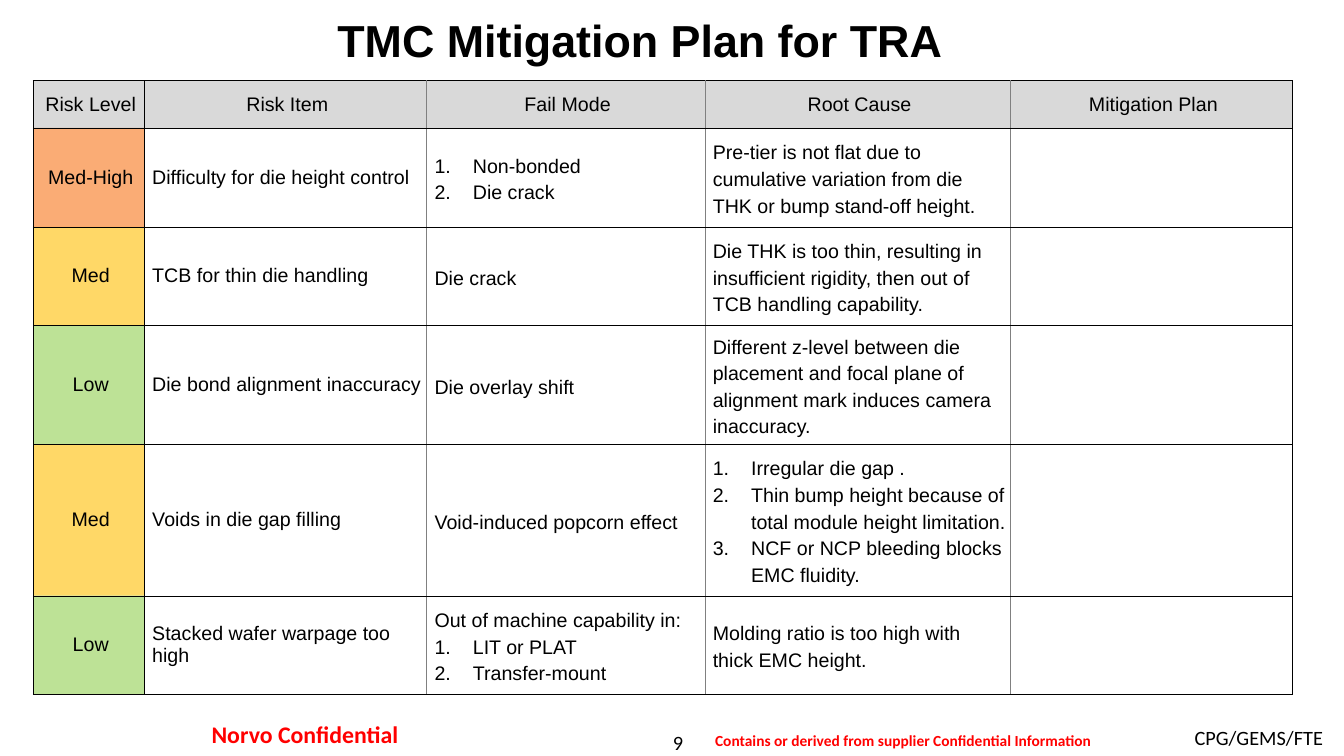
from lxml import etree
from pptx import Presentation
from pptx.dml.color import RGBColor
from pptx.enum.text import MSO_ANCHOR as Anchor, PP_ALIGN as Align
from pptx.oxml.ns import qn
from pptx.util import Inches, Pt

COLORS = {
    "text": "000000", "notice": "FF0000", "header": "D9D9D9", "body": "FFFFFF",
    "frame": "000000", "divider": "808080",
    "Med-High": "F77619", "Med": "FFBF03", "Low": "92D050",
}
HEADINGS = ["Risk Level", "Risk Item", "Fail Mode", "Root Cause", "Mitigation Plan"]
COLUMN_WIDTHS = [1.1, 2.8, 2.76, 3.03, 2.8]
ROW_HEIGHTS = [0.47, 0.98, 0.98, 1.18, 1.5, 0.98]
NUMBERED = "# "  # marks an automatically numbered line
RISKS = [
    ["Med-High", "Difficulty for die height control", "# Non-bonded\n# Die crack",
     "Pre-tier is not flat due to cumulative variation from die THK or bump stand-off height.", ""],
    ["Med", "TCB for thin die handling", "Die crack",
     "Die THK is too thin, resulting in insufficient rigidity, "
     "then out of TCB handling capability.", ""],
    ["Low", "Die bond alignment inaccuracy", "Die overlay shift",
     "Different z-level between die placement and focal plane of alignment mark "
     "induces camera inaccuracy.", ""],
    ["Med", "Voids in die gap filling", "Void-induced popcorn effect",
     "# Irregular die gap .\n# Thin bump height because of total module height limitation.\n"
     "# NCF or NCP bleeding blocks EMC fluidity.", ""],
    ["Low", "Stacked wafer warpage too high",
     "Out of machine capability in:\n# LIT or PLAT\n# Transfer-mount",
     "Molding ratio is too high with thick EMC height.", ""],
]


class SlideBuilder:
    def __init__(self, slide, font="Arial", size=14):
        self.slide, self.font, self.size = slide, font, size

    def style(self, font, name, size, color="text", bold=False):
        font.name, font.size, font.bold = name, Pt(size), bold
        font.color.rgb = RGBColor.from_string(COLORS[color])

    def text(self, box, content, size, name="Calibri", color="text", bold=False,
             align=Align.CENTER, anchor=Anchor.TOP, inset=(0, 0)):
        frame = self.slide.shapes.add_textbox(*map(Inches, box)).text_frame
        frame.word_wrap, frame.vertical_anchor = True, anchor
        frame.margin_left = frame.margin_right = Inches(inset[0])
        frame.margin_top = frame.margin_bottom = Inches(inset[1])
        frame.text = content
        paragraph = frame.paragraphs[0]
        paragraph.alignment = align
        self.style(paragraph.runs[0].font, name, size, color, bold)

    def number(self, paragraph):
        properties = paragraph._p.get_or_add_pPr()
        properties.set("marL", str(Inches(0.38)))
        properties.set("indent", str(-Inches(0.38)))
        etree.SubElement(properties, qn("a:buAutoNum"), type="arabicPeriod")

    def borders(self, cell, sides):
        properties = cell._tc.get_or_add_tcPr()
        for position, (side, color, width) in enumerate(sides):
            line = etree.Element(qn(f"a:ln{side}"), w=str(Pt(width)))
            fill = etree.SubElement(line, qn("a:solidFill"))
            etree.SubElement(fill, qn("a:srgbClr"), val=COLORS[color])
            properties.insert(position, line)

    def fill(self, cell, color, opacity=100):
        cell.fill.solid()
        cell.fill.fore_color.rgb = RGBColor.from_string(COLORS[color])
        if opacity < 100:
            shade = cell._tc.tcPr.find(".//" + qn("a:srgbClr"))
            etree.SubElement(shade, qn("a:alpha"), val=str(opacity * 1000))

    def cell(self, cell, content, align, leading=None):
        cell.vertical_anchor = Anchor.MIDDLE
        cell.margin_left = Inches(0.08)
        cell.margin_right = cell.margin_top = cell.margin_bottom = Inches(0.04)
        lines = content.split("\n")
        cell.text_frame.text = "\n".join(line.removeprefix(NUMBERED) for line in lines)
        for line, paragraph in zip(lines, cell.text_frame.paragraphs):
            paragraph.alignment = align
            if leading:
                paragraph.line_spacing = Pt(leading)
            if line.startswith(NUMBERED):
                self.number(paragraph)
            self.style(paragraph.font, self.font, self.size)
            for run in paragraph.runs:
                self.style(run.font, self.font, self.size)

    def table(self, left, top, widths, heights, rows):
        last_row, last_column = len(rows) - 1, len(widths) - 1
        table = self.slide.shapes.add_table(
            len(rows), len(widths), Inches(left), Inches(top),
            Inches(sum(widths)), Inches(sum(heights))).table
        table.first_row = table.horz_banding = False
        for column, width in zip(table.columns, widths):
            column.width = Inches(width)
        for row, height in zip(table.rows, heights):
            row.height = Inches(height)
        outer, inner, divider = ("frame", 0.75), ("frame", 0.25), ("divider", 0.25)
        for r, row in enumerate(rows):
            for c, content in enumerate(row):
                cell = table.cell(r, c)
                centred = r == 0 or c == 0
                self.cell(cell, content, Align.CENTER if centred else Align.LEFT,
                          19 if r and c in (2, 3) else None)
                if r and c == 0:
                    self.fill(cell, content, opacity=60)
                else:
                    self.fill(cell, "body" if r else "header")
                self.borders(cell, [
                    ("L", *(outer if c <= 1 else divider)),
                    ("R", *(outer if c in (0, last_column) else divider)),
                    ("T", *(outer if r <= 1 else inner)),
                    ("B", *(outer if r in (0, last_row) else inner)),
                ])


def main():
    deck = Presentation()
    deck.slide_width, deck.slide_height = Inches(13.33), Inches(7.5)
    builder = SlideBuilder(deck.slides.add_slide(deck.slide_layouts[6]))

    # Footer
    builder.text((5.56, 7.24, 2.33, 0.24), "9", 14.5)
    builder.text((8.83, 7.15, 4.39, 0.35), "CPG/GEMS/FTE", 14.5,
                 align=Align.RIGHT, inset=(0.1, 0.05))
    notice = {"color": "notice", "bold": True, "inset": (0.12, 0.06)}
    builder.text((1.55, 7.08, 2.95, 0.41), "Norvo Confidential", 17, **notice)
    builder.text((6.92, 7.19, 4.08, 0.31),
                 "Contains or derived from supplier Confidential Information", 11, **notice)

    # Title
    builder.text((0.33, 0.06, 12.04, 0.66), "TMC Mitigation Plan for TRA", 32,
                 name="Arial", bold=True, anchor=Anchor.MIDDLE)

    # Risk table
    builder.table(0.33, 0.8, COLUMN_WIDTHS, ROW_HEIGHTS, [HEADINGS, *RISKS])

    deck.save("out.pptx")


if __name__ == "__main__":
    main()
